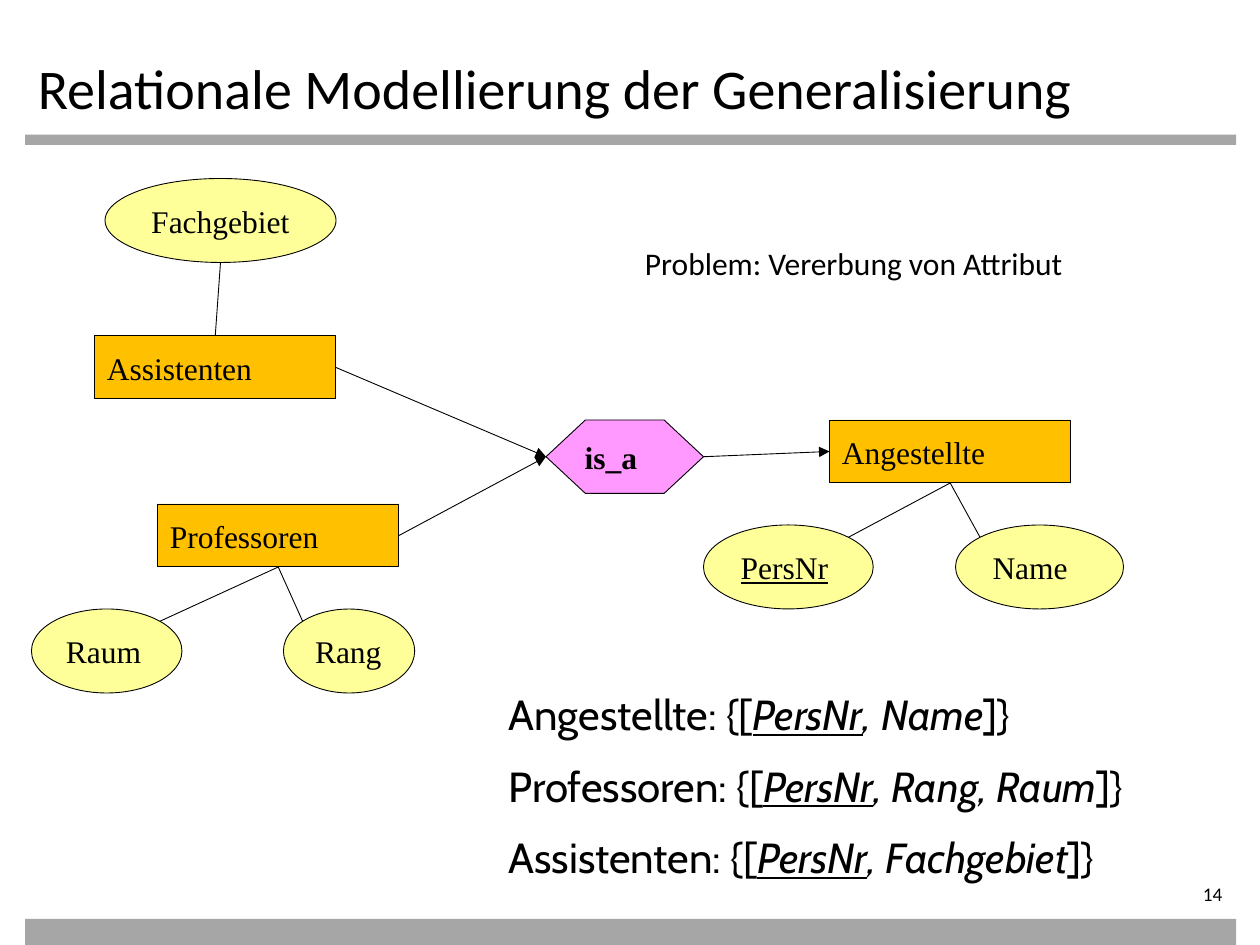
from lxml import etree
from pptx import Presentation
from pptx.dml.color import RGBColor
from pptx.enum import shapes, text
from pptx.oxml import ns
from pptx.util import Pt

BLACK = RGBColor(0x00, 0x00, 0x00)
GREY = RGBColor(0xA6, 0xA6, 0xA6)
YELLOW = RGBColor(0xFF, 0xFF, 0x99)
ORANGE = RGBColor(0xFF, 0xC0, 0x00)
PINK = RGBColor(0xFF, 0x99, 0xFF)

# Anchor points as fractions of a node's width and height
TOP, BOTTOM, LEFT, RIGHT = (0.5, 0), (0.5, 1), (0, 0.5), (1, 0.5)
UPPER_LEFT, UPPER_RIGHT = (0.146, 0.146), (0.854, 0.146)  # on an ellipse


class ErDiagram:
    heading_font = "Calibri"
    node_font = "Times New Roman"
    schema_font = "Cabin"
    line_width = Pt(0.5)

    def __init__(self, slide):
        self.slide = slide

    def run(self, paragraph, words, font, size, bold=False, italic=False,
            underline=False):
        run = paragraph.add_run()
        run.text = words
        style = run.font
        style.name, style.size = font, Pt(size)
        style.bold, style.italic, style.underline = bold, italic, underline
        style.color.rgb = BLACK

    def title(self, words, left, top, width, height):
        title = self.slide.shapes.title
        title.left, title.top = Pt(left), Pt(top)
        title.width, title.height = Pt(width), Pt(height)
        frame = title.text_frame
        frame.vertical_anchor = text.MSO_ANCHOR.MIDDLE
        frame.paragraphs[0].alignment = text.PP_ALIGN.LEFT
        self.run(frame.paragraphs[0], words, self.heading_font, 32)

    def shape(self, kind, left, top, width, height, fill):
        shape = self.slide.shapes.add_shape(
            kind, Pt(left), Pt(top), Pt(width), Pt(height))
        shape.shadow.inherit = False
        shape.fill.solid()
        shape.fill.fore_color.rgb = fill
        return shape

    def bar(self, top, height):
        bar = self.shape(shapes.MSO_SHAPE.RECTANGLE, 14.4, top, 692, height, GREY)
        bar.line.fill.background()

    def node(self, kind, words, left, top, width, height, fill, **style):
        node = self.shape(kind, left, top, width, height, fill)
        node.line.color.rgb = BLACK
        node.line.width = self.line_width
        frame = node.text_frame
        frame.word_wrap = False
        frame.vertical_anchor = text.MSO_ANCHOR.MIDDLE
        frame.paragraphs[0].alignment = text.PP_ALIGN.LEFT
        self.run(frame.paragraphs[0], words, self.node_font, 18, **style)
        return node

    def entity(self, words, left, top):
        return self.node(shapes.MSO_SHAPE.RECTANGLE, words, left, top, 138, 36, ORANGE)

    def attribute(self, words, left, top, width, **style):
        return self.node(shapes.MSO_SHAPE.OVAL, words, left, top, width, 48,
                         YELLOW, **style)

    def relation(self, words, left, top):
        relation = self.node(shapes.MSO_SHAPE.HEXAGON, words, left, top, 90, 42,
                             PINK, bold=True)
        relation.adjustments[0] = 0.536
        return relation

    def link(self, start, start_at, end, end_at, arrow=False):
        ends = [round(value) for node, (x, y) in ((start, start_at), (end, end_at))
                for value in (node.left + x * node.width, node.top + y * node.height)]
        link = self.slide.shapes.add_connector(shapes.MSO_CONNECTOR.STRAIGHT, *ends)
        link.line.color.rgb = BLACK
        link.line.width = self.line_width
        if arrow:
            etree.SubElement(link.line._get_or_add_ln(), ns.qn("a:tailEnd"),
                             type="triangle")
        etree.SubElement(link._element.spPr, ns.qn("a:effectLst"))

    def text_box(self, left, top, width, height, wrap=True):
        box = self.slide.shapes.add_textbox(Pt(left), Pt(top), Pt(width), Pt(height))
        box.text_frame.word_wrap = wrap
        return box.text_frame

    def note(self, words, left, top, width, height):
        frame = self.text_box(left, top, width, height, wrap=False)
        self.run(frame.paragraphs[0], words, self.heading_font, 18)

    def schemas(self, relations, left, top, width, height):
        frame = self.text_box(left, top, width, height)
        for index, (name, key, others) in enumerate(relations):
            paragraph = frame.add_paragraph() if index else frame.paragraphs[0]
            if index:
                paragraph.space_before = Pt(12)
            self.run(paragraph, name + ": {[", self.schema_font, 24)
            self.run(paragraph, key, self.schema_font, 24, italic=True, underline=True)
            self.run(paragraph, ", " + others, self.schema_font, 24, italic=True)
            self.run(paragraph, "]}", self.schema_font, 24)

    def page_number(self, number, left, top, width, height):
        frame = self.text_box(left, top, width, height)
        frame.margin_left = frame.margin_top = frame.margin_bottom = 0
        frame.paragraphs[0].alignment = text.PP_ALIGN.RIGHT
        self.run(frame.paragraphs[0], number, self.heading_font, 11)


def main():
    deck = Presentation()
    deck.slide_width, deck.slide_height = Pt(720), Pt(540)
    diagram = ErDiagram(deck.slides.add_slide(deck.slide_layouts[5]))

    # Frame and title
    diagram.bar(77, 5.8)
    diagram.bar(525, 15)
    diagram.title("Relationale Modellierung der Generalisierung", 14.4, 21, 705.6, 57)

    # Subtypes with their attributes
    fachgebiet = diagram.attribute("Fachgebiet", 60, 102, 132)
    assistenten = diagram.entity("Assistenten", 54, 192)
    professoren = diagram.entity("Professoren", 90, 288)
    raum = diagram.attribute("Raum", 18, 348, 86)
    rang = diagram.attribute("Rang", 162, 348, 75)

    # Generalisation and supertype
    is_a = diagram.relation("is_a", 312, 240)
    angestellte = diagram.entity("Angestellte", 474, 240)
    pers_nr = diagram.attribute("PersNr", 402, 300, 97, underline=True)
    name = diagram.attribute("Name", 546, 300, 96)

    # Attribute lines
    diagram.link(fachgebiet, BOTTOM, assistenten, TOP)
    for entity, left_attribute, right_attribute in (
            (professoren, raum, rang), (angestellte, pers_nr, name)):
        diagram.link(entity, BOTTOM, left_attribute, UPPER_RIGHT)
        diagram.link(entity, BOTTOM, right_attribute, UPPER_LEFT)

    # Inheritance arrows
    for start, end in ((assistenten, is_a), (professoren, is_a), (is_a, angestellte)):
        diagram.link(start, RIGHT, end, LEFT, arrow=True)

    # Resulting relations, remark and page number
    diagram.schemas([
        ("Angestellte", "PersNr", "Name"),
        ("Professoren", "PersNr", "Rang, Raum"),
        ("Assistenten", "PersNr", "Fachgebiet"),
    ], 283.5, 390, 417, 124)
    diagram.note("Problem: Vererbung von Attribut", 361.5, 136, 263.5, 51)
    diagram.page_number("14", 626.4, 504, 79.2, 16)

    deck.save("out.pptx")


if __name__ == "__main__":
    main()
